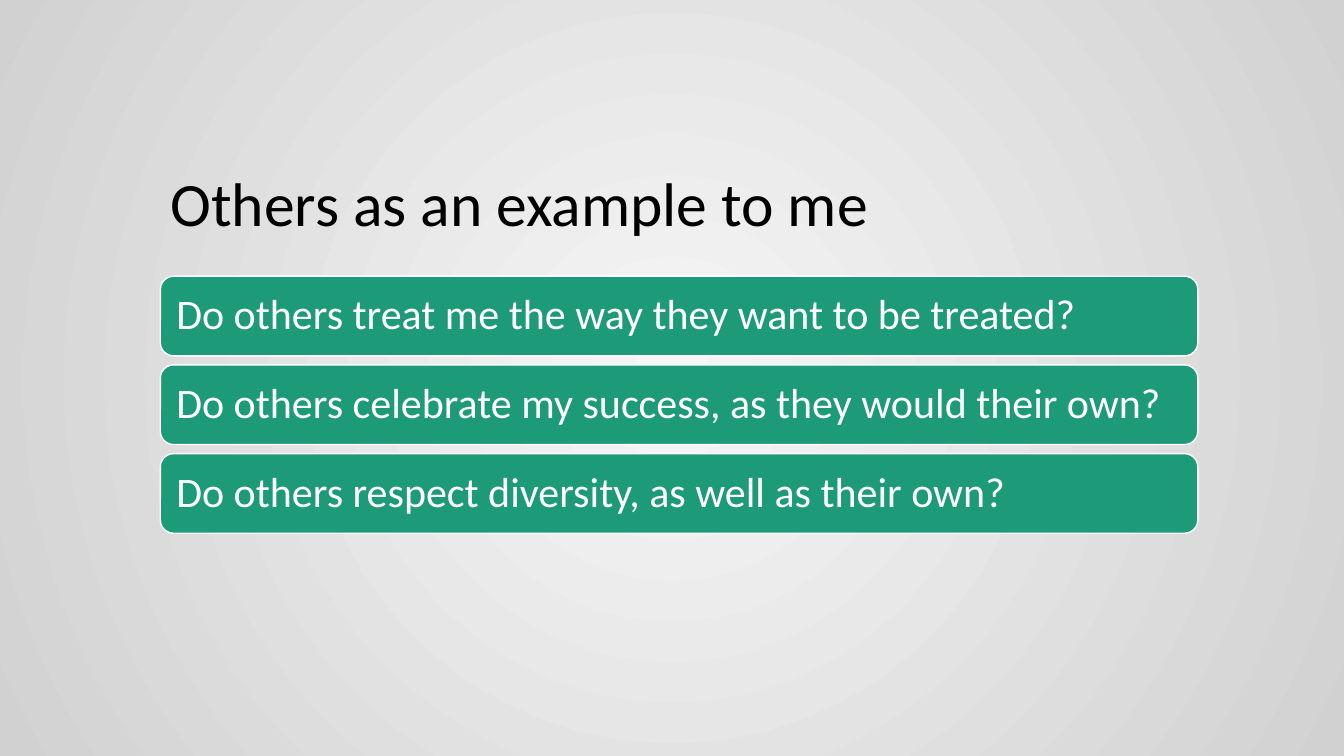
"""Build a slide with a title above a stack of question bars."""
from lxml.etree import SubElement
from pptx import Presentation
from pptx.dml.color import RGBColor
from pptx.enum.shapes import MSO_SHAPE
from pptx.enum.text import MSO_ANCHOR, PP_ALIGN
from pptx.oxml.ns import qn
from pptx.util import Inches, Pt

WIDE, HIGH = 13.33, 7.5
LEFT, SPAN = 1.59, 10.29
TOP, STEP, BAR = 2.74, 0.88, 0.79
ASKS = [
    "Do others treat me the way they want to be treated?",
    "Do others celebrate my success, as they would their own?",
    "Do others respect diversity, as well as their own?",
]


def tint(code):
    return RGBColor.from_string(code)


def grid(top, high):
    return [Inches(n) for n in (LEFT, top, SPAN, high)]


def write(shape, text, size=30, color="FFFFFF", inset=0.12):
    frame = shape.text_frame
    frame.word_wrap = True
    frame.vertical_anchor = MSO_ANCHOR.MIDDLE
    frame.margin_left = frame.margin_right = Inches(inset)
    frame.margin_top = frame.margin_bottom = Inches(inset)
    line = frame.paragraphs[0]
    line.alignment = PP_ALIGN.LEFT
    line.line_spacing = 0.9
    run = line.add_run()
    run.text = text
    run.font.name = "Calibri"
    run.font.size = Pt(size)
    run.font.color.rgb = tint(color)


def glow(slide, inner, outer):
    fill = slide.background.fill
    fill.gradient()
    for stop, code in zip(fill.gradient_stops, (inner, outer)):
        stop.color.rgb = tint(code)
    grad = slide.element.find(".//" + qn("a:gradFill"))
    grad.remove(grad.find(qn("a:lin")))
    ring = SubElement(grad, qn("a:path"), path="circle")
    SubElement(ring, qn("a:fillToRect"),
               {side: "50000" for side in "ltrb"})


def head(slide, text):
    box = slide.shapes.add_textbox(*grid(1.5, 1.1))
    write(box, text, size=44, color="000000", inset=0.1)


def bar(slide, row, text):
    place = grid(TOP + row * STEP, BAR)
    shape = slide.shapes.add_shape(MSO_SHAPE.ROUNDED_RECTANGLE, *place)
    shape.shadow.inherit = False
    shape.fill.solid()
    shape.fill.fore_color.rgb = tint("1D9A78")
    shape.line.color.rgb = tint("FFFFFF")
    shape.line.width = Pt(1)
    write(shape, text)


def main():
    deck = Presentation()
    deck.slide_width, deck.slide_height = Inches(WIDE), Inches(HIGH)
    slide = deck.slides.add_slide(deck.slide_layouts[6])
    glow(slide, "F6F6F6", "D2D1D1")
    head(slide, "Others as an example to me")
    for row, text in enumerate(ASKS):
        bar(slide, row, text)
    deck.save("out.pptx")


if __name__ == "__main__":
    main()
